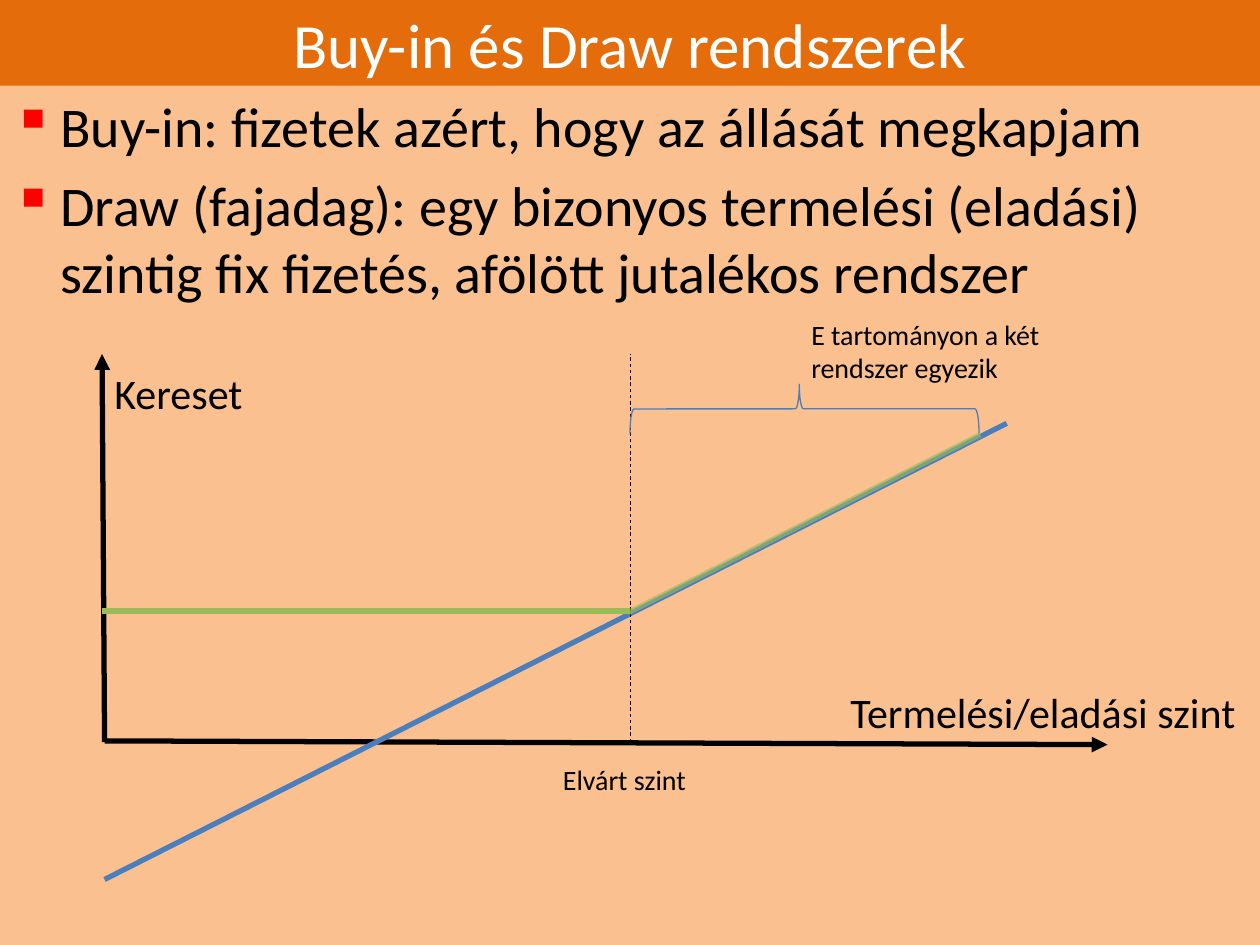
from dataclasses import dataclass

from pptx import Presentation
from pptx.dml.color import RGBColor
from pptx.enum.dml import MSO_LINE
from pptx.enum.shapes import MSO_CONNECTOR, MSO_SHAPE
from pptx.enum.text import MSO_ANCHOR, PP_ALIGN
from pptx.oxml.ns import qn
from pptx.oxml.xmlchemy import OxmlElement
from pptx.slide import Slide
from pptx.text.text import _Paragraph
from pptx.util import Inches, Pt

STRAIGHT = MSO_CONNECTOR.STRAIGHT
DASH = MSO_LINE.DASH
RECTANGLE = MSO_SHAPE.RECTANGLE
LEFT_BRACE = MSO_SHAPE.LEFT_BRACE
MIDDLE = MSO_ANCHOR.MIDDLE
CENTER = PP_ALIGN.CENTER

FONT = "Calibri"
COLORS = {
    "background": "FAC090",
    "banner": "E46C0A",
    "title": "FFFFFF",
    "text": "000000",
    "bullet": "FF0000",
    "buy_in": "4B7EBC",
    "draw": "9BBB59",
}
TITLE = "Buy-in és Draw rendszerek"
DEFINITIONS = (
    "Buy-in: fizetek azért, hogy az állását megkapjam",
    "Draw (fajadag): egy bizonyos termelési (eladási) szintig fix fizetés, "
    "afölött jutalékos rendszer",
)
SLIDE_WIDTH = 10
SLIDE_HEIGHT = 7.5
BANNER_HEIGHT = 0.68
AXIS_LEFT = 0.83
AXIS_TOP = 2.81
AXIS_BOTTOM = 5.89
EXPECTED_LEVEL = 5
FIXED_PAY = 4.85


@dataclass(frozen=True)
class Segment:
    start: tuple[float, float]
    end: tuple[float, float]
    color: str
    width: float = 3
    arrow: bool = False
    dashed: bool = False
    opacity: int = 100


@dataclass(frozen=True)
class Label:
    text: str
    left: float
    top: float
    width: float
    height: float
    size: int


SEGMENTS = (
    Segment((AXIS_LEFT, 5.88), (8.79, 5.91), "text", arrow=True),
    Segment((AXIS_LEFT, AXIS_BOTTOM), (0.81, AXIS_TOP), "text", arrow=True),
    Segment((AXIS_LEFT, 6.98), (7.99, 3.36), "buy_in"),
    Segment((EXPECTED_LEVEL, AXIS_BOTTOM), (EXPECTED_LEVEL, AXIS_TOP), "text",
            width=0.5, dashed=True),
    Segment((0.81, FIXED_PAY), (EXPECTED_LEVEL, FIXED_PAY), "draw"),
    Segment((7.78, 3.45), (4.99, 4.86), "draw", opacity=64),
)
LABELS = (
    Label("Termelési/eladási szint", 6.65, 5.4, 3.55, 0.5, 24),
    Label("Elvárt szint", 4.37, 6, 1.73, 0.37, 16),
    Label("E tartományon a két rendszer egyezik", 6.34, 2.47, 2.05, 0.64, 16),
    Label("Kereset", 0.81, 2.87, 3.55, 0.5, 24),
)


def rgb(name: str) -> RGBColor:
    return RGBColor.from_string(COLORS[name])


def add_run(paragraph: _Paragraph, text: str, size: int, color: str = "text") -> None:
    run = paragraph.add_run()
    run.text = text
    run.font.name = FONT
    run.font.size = Pt(size)
    run.font.color.rgb = rgb(color)


def add_bullet(paragraph: _Paragraph) -> None:
    properties = paragraph._p.get_or_add_pPr()
    properties.set("marL", str(Inches(0.38)))
    properties.set("indent", str(Inches(-0.38)))
    bullet_color = OxmlElement("a:buClr")
    shade = OxmlElement("a:srgbClr")
    shade.set("val", COLORS["bullet"])
    bullet_color.append(shade)
    bullet = OxmlElement("a:buChar")
    bullet.set("char", "▪")
    properties.extend((bullet_color, bullet))


def add_title(slide: Slide) -> None:
    banner = slide.shapes.add_shape(
        RECTANGLE, 0, 0, Inches(SLIDE_WIDTH), Inches(BANNER_HEIGHT))
    banner.shadow.inherit = False
    banner.fill.solid()
    banner.fill.fore_color.rgb = rgb("banner")
    banner.line.fill.background()
    banner.text_frame.vertical_anchor = MIDDLE
    heading = banner.text_frame.paragraphs[0]
    heading.alignment = CENTER
    add_run(heading, TITLE, 36, "title")


def add_definitions(slide: Slide) -> None:
    body = slide.shapes.add_textbox(
        0, Inches(BANNER_HEIGHT), Inches(SLIDE_WIDTH),
        Inches(SLIDE_HEIGHT - BANNER_HEIGHT)).text_frame
    body.word_wrap = True
    for index, definition in enumerate(DEFINITIONS):
        paragraph = body.add_paragraph() if index else body.paragraphs[0]
        paragraph.space_before = Pt(6.4)
        add_bullet(paragraph)
        add_run(paragraph, definition, 32)


def add_segment(slide: Slide, segment: Segment) -> None:
    connector = slide.shapes.add_connector(
        STRAIGHT, *map(Inches, segment.start + segment.end))
    connector.line.color.rgb = rgb(segment.color)
    connector.line.width = Pt(segment.width)
    if segment.dashed:
        connector.line.dash_style = DASH
    properties = connector._element.spPr
    outline = properties.find(qn("a:ln"))
    if segment.opacity < 100:
        alpha = OxmlElement("a:alpha")
        alpha.set("val", str(segment.opacity * 1000))
        outline.find(".//" + qn("a:srgbClr")).append(alpha)
    if segment.arrow:
        arrowhead = OxmlElement("a:tailEnd")
        arrowhead.set("type", "triangle")
        outline.append(arrowhead)
    properties.append(OxmlElement("a:effectLst"))


def add_brace(slide: Slide) -> None:
    brace = slide.shapes.add_shape(
        LEFT_BRACE, Inches(6.19), Inches(1.86), Inches(0.39), Inches(2.77))
    brace.shadow.inherit = False
    brace.rotation = 90
    brace.adjustments[0] = 0.083
    brace.adjustments[1] = 0.515
    brace.fill.background()
    brace.line.color.rgb = rgb("buy_in")
    brace.line.width = Pt(0.75)


def add_label(slide: Slide, label: Label) -> None:
    frame = slide.shapes.add_textbox(
        Inches(label.left), Inches(label.top),
        Inches(label.width), Inches(label.height)).text_frame
    frame.word_wrap = True
    add_run(frame.paragraphs[0], label.text, label.size)


def main() -> None:
    presentation = Presentation()
    presentation.slide_width = Inches(SLIDE_WIDTH)
    presentation.slide_height = Inches(SLIDE_HEIGHT)
    slide = presentation.slides.add_slide(presentation.slide_layouts[6])
    slide.background.fill.solid()
    slide.background.fill.fore_color.rgb = rgb("background")
    add_title(slide)
    add_definitions(slide)
    for segment in SEGMENTS:
        add_segment(slide, segment)
    add_brace(slide)
    for label in LABELS:
        add_label(slide, label)
    presentation.save("out.pptx")


if __name__ == "__main__":
    main()
